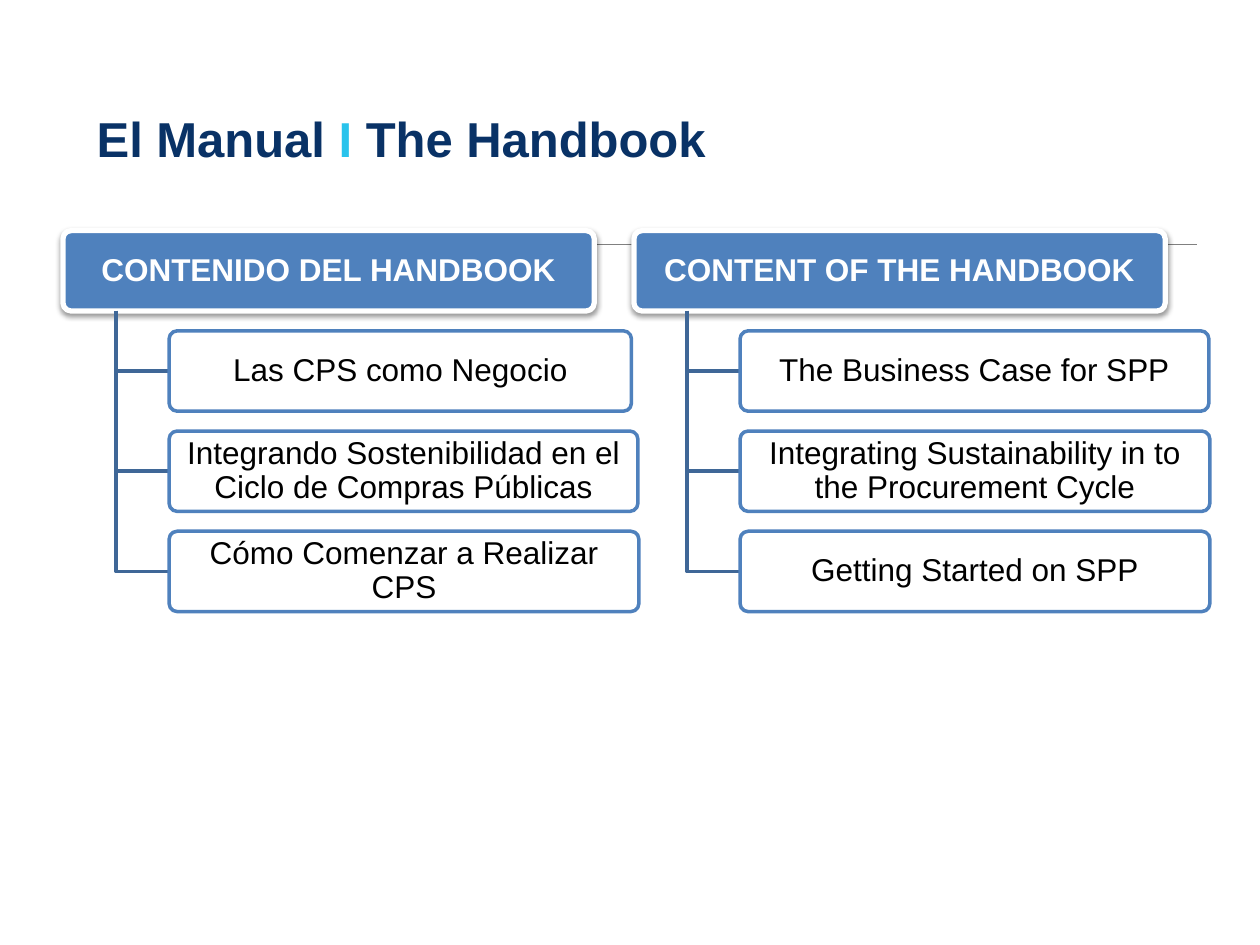
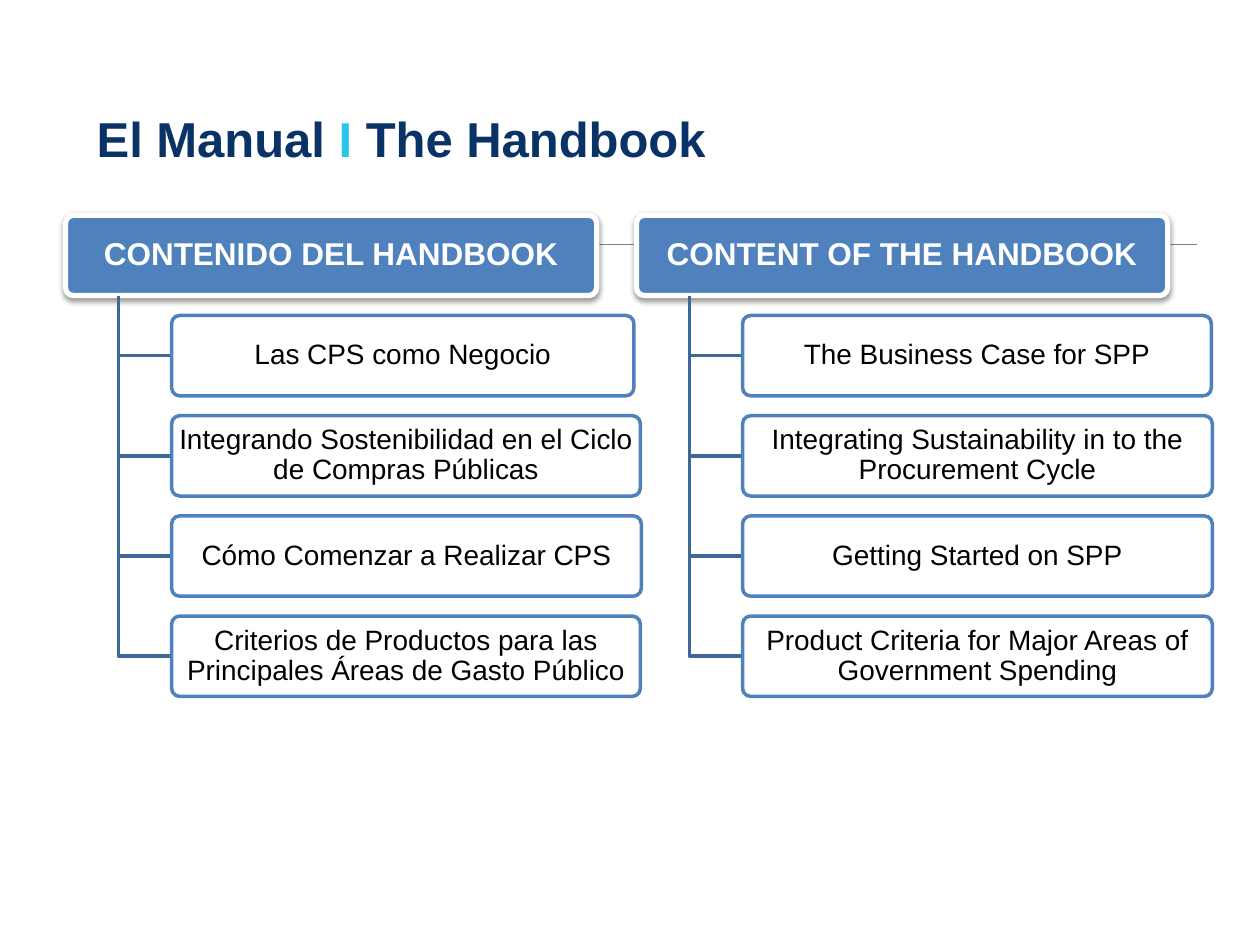
from lxml.etree import SubElement
from pptx import Presentation
from pptx.dml.color import RGBColor
from pptx.enum.shapes import MSO_CONNECTOR, MSO_SHAPE
from pptx.enum.text import MSO_ANCHOR, PP_ALIGN
from pptx.oxml import parse_xml
from pptx.oxml.ns import nsdecls, qn
from pptx.util import Cm, Pt

NAVY = RGBColor(0x09, 0x32, 0x66)
CYAN = RGBColor(0x29, 0xC3, 0xEC)
BLUE = RGBColor(0x4F, 0x81, 0xBD)
STEM_BLUE = RGBColor(0x3F, 0x67, 0x97)
GREY = RGBColor(0x80, 0x80, 0x80)
WHITE = RGBColor(0xFF, 0xFF, 0xFF)
BLACK = RGBColor(0x00, 0x00, 0x00)
FONT = "Arial"

BOX_HEIGHT = Cm(1.62)
ROW_PITCH = Cm(2.02)
COLUMN_PITCH = Cm(11.51)
HEADER_WIDTH = Cm(10.71)
STEM_INDENT = Cm(1.07)
TOPIC_INDENT = Cm(2.14)

HEADER_SHADOW = (
    f'<a:outerShdw {nsdecls("a")} blurRad="39370" dist="20320" dir="5400000" rotWithShape="0">'
    '<a:srgbClr val="000000"><a:alpha val="38000"/></a:srgbClr></a:outerShdw>'
)

SPANISH = [
    ("Las CPS como Negocio", 9.32),
    ("Integrando Sostenibilidad en el Ciclo de Compras Públicas", 9.45),
    ("Cómo Comenzar a Realizar CPS", 9.47),
    ("Criterios de Productos para las Principales Áreas de Gasto Público", 9.45),
]
ENGLISH = [
    ("The Business Case for SPP", 9.45),
    ("Integrating Sustainability in to the Procurement Cycle", 9.47),
    ("Getting Started on SPP", 9.47),
    ("Product Criteria for Major Areas of Government Spending", 9.47),
]
COLUMNS = [("CONTENIDO DEL HANDBOOK", SPANISH), ("CONTENT OF THE HANDBOOK", ENGLISH)]

SLIDES = [
    (Cm(1.27), Cm(4.65), 3, Pt(18), Cm(0.1), Cm(0.07)),
    (Cm(1.32), Cm(4.34), 4, Pt(16), Cm(0.08), Cm(0.05)),
]


def add_box(slide, text, left, top, width, fill, line, line_width, size, color, side, edge):
    box = slide.shapes.add_shape(MSO_SHAPE.ROUNDED_RECTANGLE, left, top, width, BOX_HEIGHT)
    box.adjustments[0] = 0.1
    box.shadow.inherit = False
    box.fill.solid()
    box.fill.fore_color.rgb = fill
    box.line.color.rgb = line
    box.line.width = line_width
    frame = box.text_frame
    frame.word_wrap = True
    frame.vertical_anchor = MSO_ANCHOR.MIDDLE
    frame.margin_left = frame.margin_right = side
    frame.margin_top = frame.margin_bottom = edge
    label = frame.paragraphs[0]
    label.text = text
    label.alignment = PP_ALIGN.CENTER
    label.line_spacing = 0.9
    label.font.name = FONT
    label.font.size = size
    label.font.color.rgb = color
    return box


deck = Presentation()
deck.slide_width = Cm(25.4)
deck.slide_height = Cm(19.05)

for first_left, header_top, topic_count, topic_size, side, edge in SLIDES:
    slide = deck.slides.add_slide(deck.slide_layouts[6])

    rule = slide.shapes.add_connector(
        MSO_CONNECTOR.STRAIGHT, Cm(1.27), Cm(4.93), Cm(24.13), Cm(4.93))
    rule.line.color.rgb = GREY
    rule.line.width = Pt(0.75)
    SubElement(rule.element.spPr, qn("a:effectLst"))

    for column, (heading, topics) in enumerate(COLUMNS):
        left = first_left + column * COLUMN_PITCH
        header = add_box(slide, heading, left, header_top, HEADER_WIDTH,
                         BLUE, WHITE, Pt(3), Pt(18), WHITE, Cm(0.1), Cm(0.07))
        header.text_frame.paragraphs[0].font.bold = True
        header.element.spPr.find(qn("a:effectLst")).append(parse_xml(HEADER_SHADOW))

        stem_left = left + STEM_INDENT
        topic_left = left + TOPIC_INDENT
        for row, (topic, width) in enumerate(topics[:topic_count], start=1):
            topic_top = header_top + row * ROW_PITCH
            middle = topic_top + BOX_HEIGHT // 2
            outline = slide.shapes.build_freeform(stem_left, header_top + BOX_HEIGHT)
            outline.add_line_segments([(stem_left, middle), (topic_left, middle)], close=False)
            stem = outline.convert_to_shape()
            stem.shadow.inherit = False
            stem.fill.background()
            stem.line.color.rgb = STEM_BLUE
            stem.line.width = Pt(2)

            topic_box = add_box(slide, topic, topic_left, topic_top, Cm(width),
                                WHITE, BLUE, Pt(2), topic_size, BLACK, side, edge)
            tint = topic_box.element.spPr.find(qn("a:solidFill"))[0]
            SubElement(tint, qn("a:alpha")).set("val", "90000")

    title = slide.shapes.add_textbox(Cm(1.7), Cm(1.19), Cm(13.8), Cm(3.18)).text_frame
    title.word_wrap = True
    title.vertical_anchor = MSO_ANCHOR.MIDDLE
    title_line = title.paragraphs[0]
    title_line.font.name = FONT
    title_line.font.size = Pt(28)
    title_line.font.bold = True
    for words, color in [("El Manual ", NAVY), ("I", CYAN), (" The Handbook", NAVY)]:
        run = title_line.add_run()
        run.text = words
        run.font.color.rgb = color

deck.save("out.pptx")
